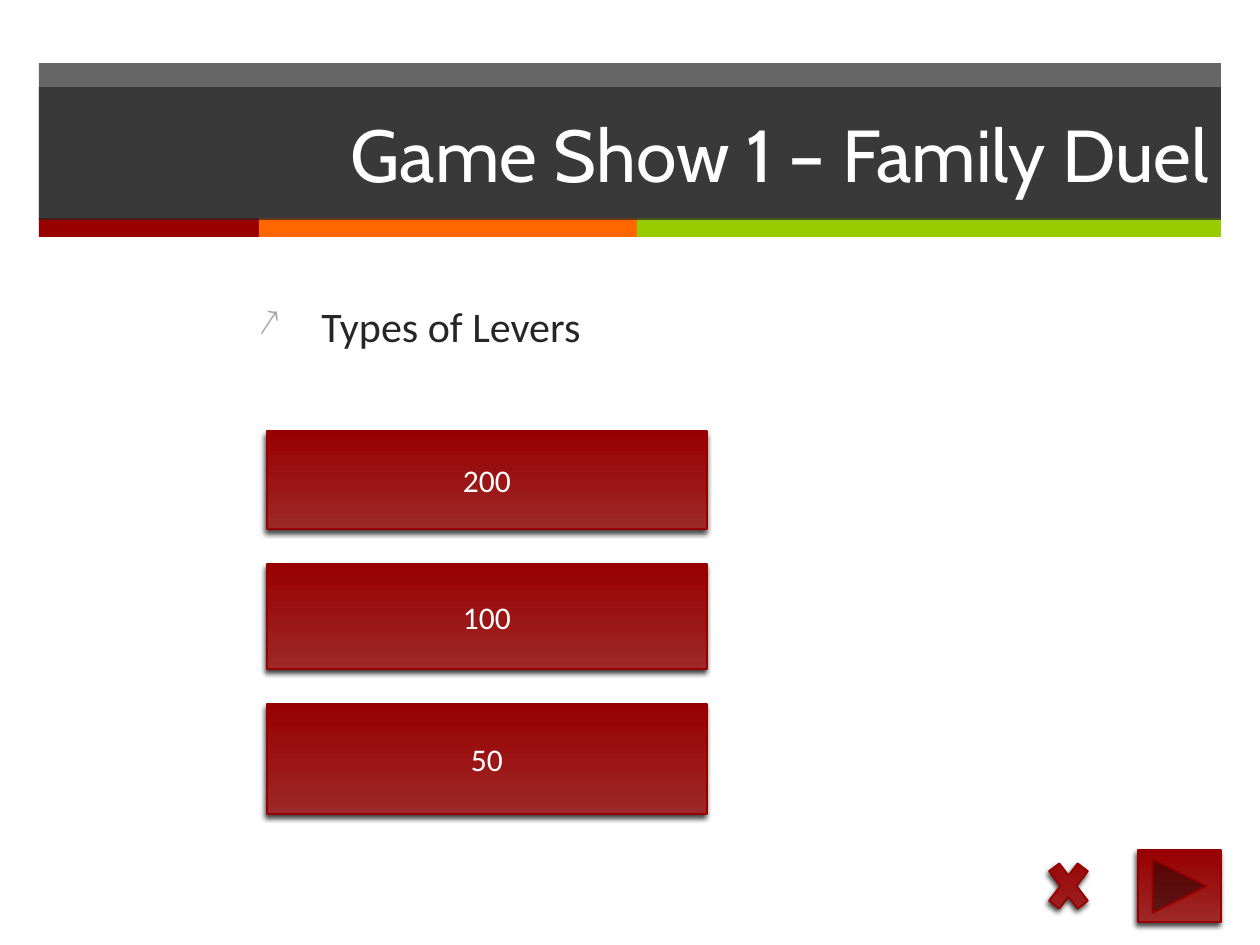
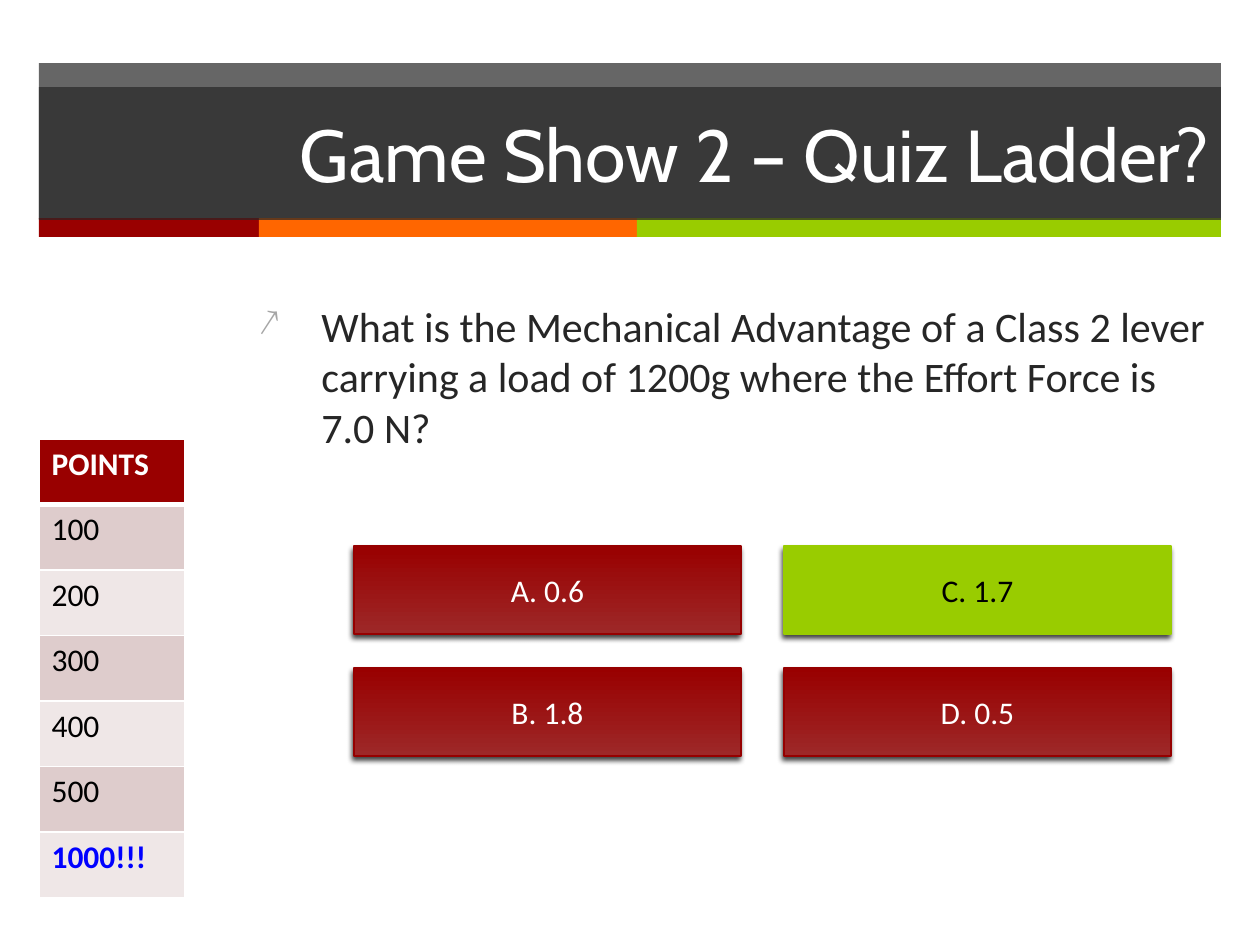
from lxml import etree
from pptx import Presentation
from pptx.dml.color import RGBColor
from pptx.enum.shapes import MSO_SHAPE
from pptx.enum.text import MSO_ANCHOR, PP_ALIGN
from pptx.oxml.ns import qn
from pptx.util import Emu, Pt

RECT = MSO_SHAPE.RECTANGLE
BUTTON = MSO_SHAPE.ACTION_BUTTON_CUSTOM
NEXT = MSO_SHAPE.ACTION_BUTTON_FORWARD_OR_NEXT
CROSS = MSO_SHAPE.MATH_MULTIPLY
LEFT, CENTER, RIGHT = PP_ALIGN.LEFT, PP_ALIGN.CENTER, PP_ALIGN.RIGHT
TOP, MIDDLE = MSO_ANCHOR.TOP, MSO_ANCHOR.MIDDLE

PX_PER_INCH = 126
SLIDE_SIZE = (1260, 945)
HEAD_FONT, BODY_FONT = "Cabin", "Calibri"
WHITE, BLACK, DARK, GREY, BLUE = "FFFFFF", "000000", "262626", "A6A6A6", "0000FF"
RED, RED_LIGHT, RED_EDGE = "990000", "9D2828", "960000"
ORANGE, GREEN = "FF6600", "99CC00"
BANDS = ("DECCCC", "EFE7E7")

HEADER_BOX = (39, 63, 1182, 174)
STRIPES = ((220, RED), (378, ORANGE), (584, GREEN))


def px(length):
    """Turn pixels into EMU."""
    return Emu(round(length * 914400 / PX_PER_INCH))


def color(value):
    """Turn a hex string into a colour."""
    return RGBColor.from_string(value)


def add_xml(parent, tag, **attributes):
    """Append a DrawingML element with the given attributes."""
    values = {name: str(value) for name, value in attributes.items()}
    return etree.SubElement(parent, qn(f"a:{tag}"), values)


def write(frame, text, size=18, font=BODY_FONT, ink=BLACK, bold=False,
          align=LEFT, anchor=TOP):
    """Write one formatted paragraph into a text frame and return it."""
    frame.word_wrap = True
    frame.vertical_anchor = anchor
    paragraph = frame.paragraphs[0]
    paragraph.alignment = align
    run = paragraph.add_run()
    run.text = text
    run.font.size = Pt(size)
    run.font.name = font
    run.font.bold = bold
    run.font.color.rgb = color(ink)
    return paragraph


def add_block(slide, box, fill, kind=RECT, alpha=None):
    """Add a flat borderless shape, see-through if alpha is given."""
    block = slide.shapes.add_shape(kind, *map(px, box))
    block.shadow.inherit = False
    block.line.fill.background()
    block.fill.solid()
    block.fill.fore_color.rgb = color(fill)
    if alpha is not None:
        tint = block.element.spPr.find(f"{qn('a:solidFill')}/{qn('a:srgbClr')}")
        add_xml(tint, "alpha", val=alpha * 1000)
    return block


def add_button(slide, box, label="", kind=RECT, correct=False):
    """Add a raised button, green when it holds the correct answer."""
    button = add_block(slide, box, GREEN, kind)
    if not correct:
        button.fill.gradient()
        button.fill.gradient_angle = 90
        for stop, position, shade in zip(button.fill.gradient_stops, (0, 1),
                                         (RED_LIGHT, RED)):
            stop.position = position
            stop.color.rgb = color(shade)
    button.line.color.rgb = color(GREEN if correct else RED_EDGE)
    button.line.width = Pt(1)
    effects = button.element.spPr.find(qn("a:effectLst"))
    shadow = add_xml(effects, "outerShdw", blurRad=Pt(3), dist=Pt(2),
                     dir=110 * 60000, algn="tl", rotWithShape=0)
    add_xml(add_xml(shadow, "srgbClr", val=BLACK), "alpha", val=75000)
    if label:
        write(button.text_frame, label, ink=BLACK if correct else WHITE,
              align=CENTER, anchor=MIDDLE)


def add_header(slide, box, title):
    """Draw the dark double band, the colour stripes and the title."""
    left, top, width, height = box
    add_block(slide, (left, top, width, height - 18), DARK, alpha=70)
    stripe_left = left
    for stripe_width, fill in STRIPES:
        add_block(slide, (stripe_left, top + height - 19, stripe_width, 19), fill)
        stripe_left += stripe_width
    band = add_block(slide, (left, top + 24, width, 133), DARK, alpha=70)
    write(band.text_frame, title, size=42, font=HEAD_FONT, ink=WHITE,
          align=RIGHT, anchor=MIDDLE)


def add_prompt(slide, box, text):
    """Add the topic or question with its arrow bullet."""
    prompt = slide.shapes.add_textbox(*map(px, box))
    paragraph = write(prompt.text_frame, text, size=24, ink=DARK)
    paragraph.space_before = Pt(20)
    properties = paragraph._p.get_or_add_pPr()
    properties.set("marL", str(px(63)))
    properties.set("indent", str(-px(63)))
    add_xml(add_xml(properties, "buClr"), "srgbClr", val=GREY)
    add_xml(properties, "buSzPct", val=90000)
    add_xml(properties, "buChar", char="↗")


def add_levels(slide, box, levels, gap=35):
    """Stack the point buttons downwards with equal gaps."""
    left, top, width = box
    for label, height in levels:
        add_button(slide, (left, top, width, height), label, BUTTON)
        top += height + gap


def add_controls(slide, box):
    """Place the cross and the next button at the two ends of the box."""
    left, top, width, height = box
    add_button(slide, (left + width - 83, top, 83, height), kind=NEXT)
    add_button(slide, (left, top, 55, height), kind=CROSS)


def add_answers(slide, box, answers, correct, gap_x=43, gap_y=34):
    """Lay out four answers in two columns, filled column by column."""
    left, top, width, height = box
    answer_width, answer_height = (width - gap_x) // 2, (height - gap_y) // 2
    for index, answer in enumerate(answers):
        column, row = divmod(index, 2)
        add_button(slide, (left + column * (answer_width + gap_x),
                           top + row * (answer_height + gap_y),
                           answer_width, answer_height),
                   answer, correct=answer == correct)


def add_borders(cell, **widths):
    """Give the cell white borders of the given widths in points."""
    properties = cell._tc.get_or_add_tcPr()
    for side in "LRTB":
        line = add_xml(properties, f"ln{side}", w=Pt(widths.get(side, 1)))
        add_xml(add_xml(line, "solidFill"), "srgbClr", val=WHITE)


def add_points(slide, box, points):
    """Build the points ladder with its heading and highlighted top prize."""
    frame = slide.shapes.add_table(len(points), 1, *map(px, box))
    last = len(points) - 1
    for index, value in enumerate(points):
        cell = frame.table.cell(index, 0)
        add_borders(cell, T=3 if index == 1 else 1, B=3 if index == 0 else 1)
        cell.fill.solid()
        cell.fill.fore_color.rgb = color(BANDS[(index - 1) % 2] if index else RED)
        ink = {0: WHITE, last: BLUE}.get(index, BLACK)
        write(cell.text_frame, value, ink=ink, bold=index in (0, last))


def build_duel(slide):
    """Build the slide of the first game."""
    add_header(slide, HEADER_BOX, "Game Show 1 – Family Duel")
    add_prompt(slide, (246, 294, 975, 78), "Types of Levers")
    add_levels(slide, (267, 431, 440), (("200", 98), ("100", 105), ("50", 110)))
    add_controls(slide, (1041, 850, 180, 72))


def build_quiz(slide):
    """Build the slide of the second game."""
    add_header(slide, HEADER_BOX, "Game Show 2 – Quiz Ladder?")
    add_prompt(slide, (246, 294, 975, 168),
               "What is the Mechanical Advantage of a Class 2 lever carrying "
               "a load of 1200g where the Effort Force is 7.0 N?")
    add_points(slide, (39, 439, 146, 459),
               ("POINTS", "100", "200", "300", "400", "500", "1000!!!"))
    add_answers(slide, (354, 546, 817, 210),
                ("A. 0.6", "B. 1.8", "C. 1.7", "D. 0.5"), correct="C. 1.7")


def main():
    """Create and save the presentation."""
    deck = Presentation()
    deck.slide_width, deck.slide_height = map(px, SLIDE_SIZE)
    for build in (build_duel, build_quiz):
        build(deck.slides.add_slide(deck.slide_layouts[6]))
    deck.save("out.pptx")


if __name__ == "__main__":
    main()
